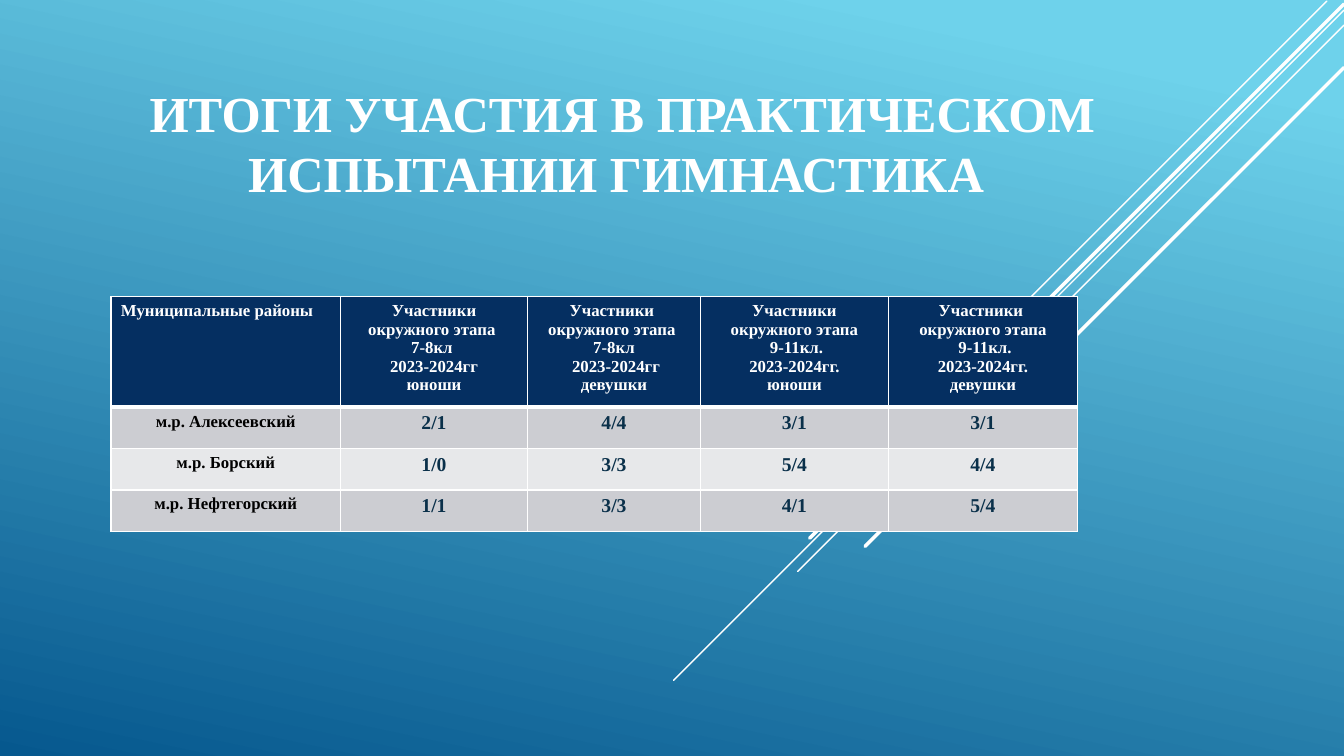
from dataclasses import dataclass

from lxml.etree import SubElement
from pptx import Presentation
from pptx.dml.color import RGBColor
from pptx.enum.shapes import MSO_CONNECTOR as Connector
from pptx.enum.text import MSO_ANCHOR as Anchor, PP_ALIGN as Align
from pptx.oxml.ns import qn
from pptx.util import Inches, Pt


@dataclass(frozen=True)
class Theme:
    font: str = "Times New Roman"
    white: str = "FFFFFF"
    sky: str = "6ED2EB"
    deep: str = "06588E"
    header: str = "052F61"
    bands: tuple = ("CCCDD2", "E7E8EA")
    district: str = "000000"
    score: str = "0A304A"
    title_size: int = 36
    label_size: int = 12
    score_size: int = 14
    thin: float = 1
    thick: float = 2.5
    rule: float = 3


THEME = Theme()
TITLE = "ИТОГИ УЧАСТИЯ В ПРАКТИЧЕСКОМ ИСПЫТАНИИ ГИМНАСТИКА "
HEADINGS = [
    ["Муниципальные районы"],
    ["Участники окружного этапа ", "7-8кл ", "2023-2024гг", "юноши"],
    ["Участники ", "окружного этапа ", "7-8кл", " 2023-2024гг", "девушки"],
    ["Участники окружного этапа", " 9-11кл.", "2023-2024гг.", "юноши"],
    ["Участники ", "окружного этапа", " 9-11кл.", "2023-2024гг.", "девушки"],
]
RESULTS = [
    ("м.р. Алексеевский", "2/1", "4/4", "3/1", "3/1"),
    ("м.р. Борский", "1/0", "3/3", "5/4", "4/4"),
    ("м.р. Нефтегорский", "1/1", "3/3", "4/1", "5/4"),
]
COLUMN_WIDTHS = (2.28, 1.85, 1.72, 1.86, 1.88)
HEADER_HEIGHT, ROW_HEIGHT = 1.03, 0.41
RAYS = [
    (13.16, 0.01, 4.17, THEME.thin),
    (13.33, 0.1, 6.65, THEME.thin),
    (13.33, 0.25, 5.42, THEME.thin),
    (13.33, 0.04, 5.3, THEME.thick),
    (13.33, 0.67, 4.75, THEME.thick),
]


def rgb(color):
    return RGBColor.from_string(color)


def write(frame, lines, size, color, align):
    for index, line in enumerate(lines):
        paragraph = frame.paragraphs[0] if index == 0 else frame.add_paragraph()
        paragraph.alignment = align
        run = paragraph.add_run()
        run.text = line
        style = {"name": THEME.font, "size": Pt(size), "bold": True}
        for key, value in style.items():
            setattr(run.font, key, value)
        run.font.color.rgb = rgb(color)


def paint_background(slide):
    fill = slide.background.fill
    fill.gradient()
    fill.gradient_angle = 258
    for stop, color, position in zip(fill.gradient_stops, (THEME.sky, THEME.deep), (0.1, 1)):
        stop.color.rgb = rgb(color)
        stop.position = position


def add_rays(slide, box):
    left, top = box
    for x, y, reach, weight in RAYS:
        start_x, start_y = left + x, top + y
        ray = slide.shapes.add_connector(
            Connector.STRAIGHT, Inches(start_x), Inches(start_y),
            Inches(start_x - reach), Inches(start_y + reach))
        ray.line.color.rgb = rgb(THEME.white)
        ray.line.width = Pt(weight)
        ray.line._get_or_add_ln().set("cap", "rnd")
        SubElement(ray._element.spPr, qn("a:effectLst"))


def add_title(slide, box):
    frame = slide.shapes.add_textbox(*map(Inches, box)).text_frame
    settings = {"word_wrap": True, "vertical_anchor": Anchor.BOTTOM}
    for key, value in settings.items():
        setattr(frame, key, value)
    write(frame, [TITLE], THEME.title_size, THEME.white, Align.CENTER)


def add_borders(cell, weights):
    properties = cell._tc.get_or_add_tcPr()
    for side, weight in weights.items():
        border = SubElement(properties, qn(f"a:ln{side}"), w=str(Pt(weight)))
        fill = SubElement(border, qn("a:solidFill"))
        SubElement(fill, qn("a:srgbClr"), val=THEME.white)


def fill_cell(cell, lines, size, color, fill, align, weights):
    write(cell.text_frame, lines, size, color, align)
    add_borders(cell, weights)
    cell.fill.solid()
    cell.fill.fore_color.rgb = rgb(fill)


def add_results(slide, box):
    left, top = box
    heights = [HEADER_HEIGHT] + [ROW_HEIGHT] * len(RESULTS)
    table = slide.shapes.add_table(
        len(heights), len(COLUMN_WIDTHS), Inches(left), Inches(top),
        Inches(sum(COLUMN_WIDTHS)), Inches(sum(heights))).table
    for column, width in zip(table.columns, COLUMN_WIDTHS):
        column.width = Inches(width)
    for row, height in zip(table.rows, heights):
        row.height = Inches(height)

    sides = dict.fromkeys("LRTB", THEME.thin)
    for column, heading in enumerate(HEADINGS):
        align = Align.CENTER if column else Align.LEFT
        fill_cell(table.cell(0, column), heading, THEME.label_size, THEME.white,
                  THEME.header, align, sides | {"B": THEME.rule})
    for row, result in enumerate(RESULTS, 1):
        band = THEME.bands[(row - 1) % 2]
        weights = sides | {"T": THEME.rule if row == 1 else THEME.thin}
        for column, entry in enumerate(result):
            size = THEME.score_size if column else THEME.label_size
            color = THEME.score if column else THEME.district
            fill_cell(table.cell(row, column), [entry], size, color, band,
                      Align.CENTER, weights)


def main():
    deck = Presentation()
    deck.slide_width, deck.slide_height = Inches(13.33), Inches(7.5)
    slide = deck.slides.add_slide(deck.slide_layouts[6])
    paint_background(slide)
    add_rays(slide, (0, 0))
    add_title(slide, (0.75, 0.75, 10.85, 1.31))
    add_results(slide, (1.1, 2.94))
    deck.save("out.pptx")


if __name__ == "__main__":
    main()
